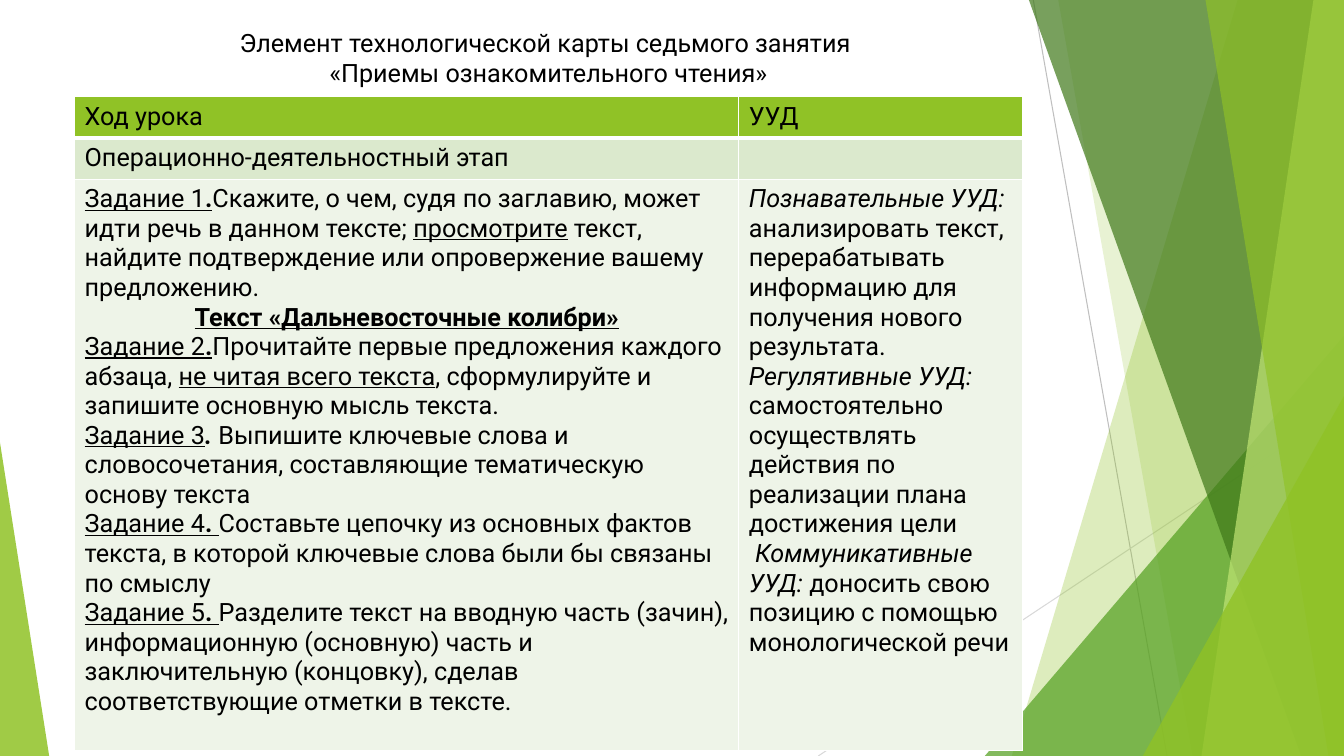
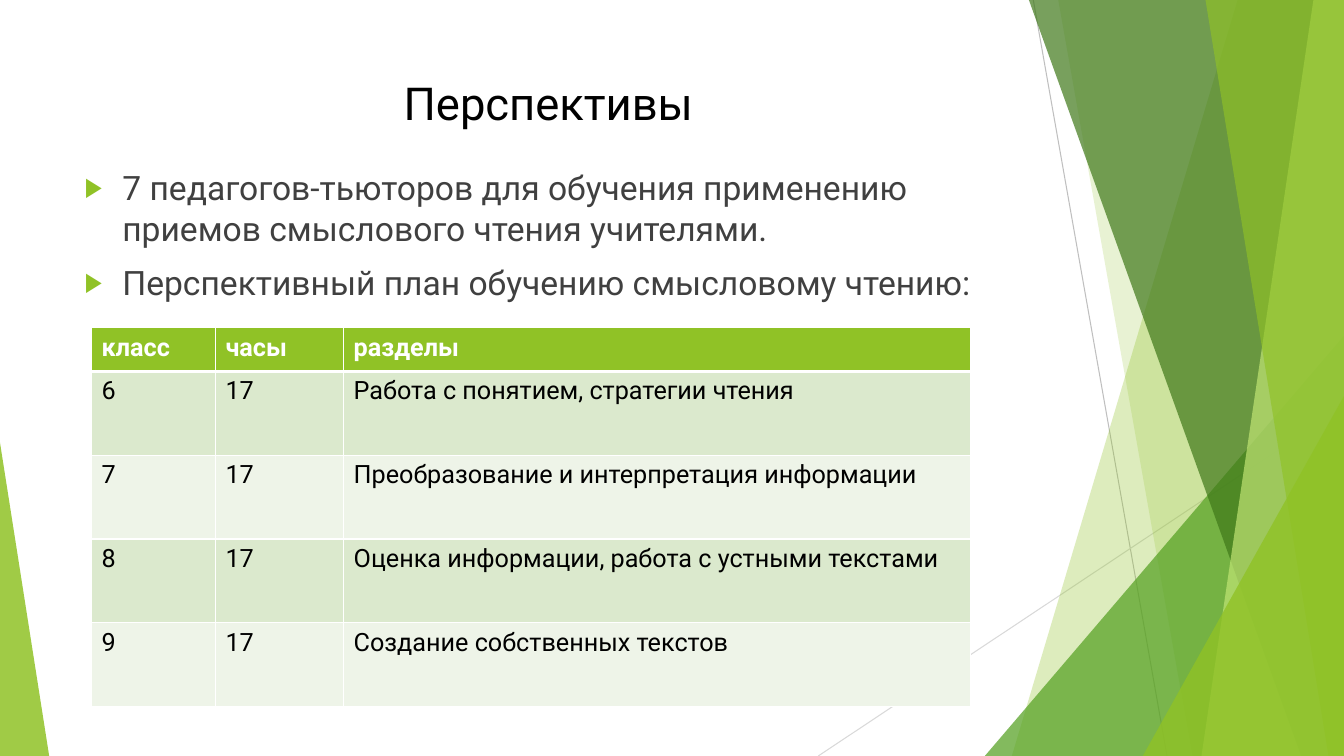
from lxml.etree import SubElement
from pptx import Presentation
from pptx.dml.color import RGBColor
from pptx.enum.shapes import MSO_CONNECTOR, MSO_SHAPE
from pptx.enum.text import MSO_ANCHOR, MSO_AUTO_SIZE, PP_ALIGN
from pptx.oxml.ns import qn
from pptx.util import Cm, Pt

# Colours
LIME = RGBColor(0x90, 0xC2, 0x26)
GREEN = RGBColor(0x54, 0xA0, 0x21)
DARK = RGBColor(0x3F, 0x78, 0x19)
PALE = RGBColor(0xC0, 0xE4, 0x74)
BAND = RGBColor(0xDB, 0xE9, 0xCD)
LIGHT = RGBColor(0xEE, 0xF4, 0xE8)
SILVER = RGBColor(0xBF, 0xBF, 0xBF)
MIST = RGBColor(0xD9, 0xD9, 0xD9)
TEXT = RGBColor(0x40, 0x40, 0x40)
BLACK = RGBColor(0, 0, 0)
WHITE = RGBColor(0xFF, 0xFF, 0xFF)

WIDE, HIGH = 33.87, 19.05
LEFT, SPAN = 1.88, 23.88  # shared text column


class Deck:
    """Holds the style and the current slide."""

    font = "Roboto"

    def __init__(self):
        self.prs = Presentation()
        self.prs.slide_width, self.prs.slide_height = Cm(WIDE), Cm(HIGH)
        self.slide = None

    def start(self, layout, title, top, height, size):
        self.slide = self.prs.slides.add_slide(self.prs.slide_layouts[layout])
        self.decor()
        self.title(title, top, height, size)

    def style(self, run, size, color, marks=""):
        font = run.font
        font.name, font.size, font.color.rgb = self.font, Pt(size), color
        font.bold, font.italic = "b" in marks, "i" in marks
        font.underline = "u" in marks

    # Backdrop
    def line(self, x1, y1, x2, y2, color):
        line = self.slide.shapes.add_connector(
            MSO_CONNECTOR.STRAIGHT, Cm(x1), Cm(y1), Cm(x2), Cm(y2))
        line.line.color.rgb, line.line.width = color, Pt(0.75)
        SubElement(line.element.spPr, qn("a:effectLst"))

    def paint(self, shape, color, alpha):
        shape.shadow.inherit = False
        shape.fill.solid()
        shape.fill.fore_color.rgb = color
        tone = shape.element.spPr.find(".//" + qn("a:srgbClr"))
        SubElement(tone, qn("a:alpha"), val=str(alpha * 1000))
        shape.line.fill.background()

    def blade(self, top, foot, color, alpha):
        """Full-height pane from a slanted left edge to the right slide edge."""
        pen = self.slide.shapes.build_freeform(Cm(top), 0)
        pen.add_line_segments([(Cm(WIDE), 0), (Cm(WIDE), Cm(HIGH)),
                               (Cm(foot), Cm(HIGH))])
        self.paint(pen.convert_to_shape(), color, alpha)

    def wedge(self, left, right, top, peak, color, alpha):
        """Triangle standing on the bottom edge of the slide."""
        shape = self.slide.shapes.add_shape(
            MSO_SHAPE.ISOSCELES_TRIANGLE,
            Cm(left), Cm(top), Cm(right - left), Cm(HIGH - top))
        shape.adjustments[0] = peak
        self.paint(shape, color, alpha)

    def decor(self):
        self.line(26.04, 0, 29.41, HIGH, SILVER)
        self.line(WIDE, 10.24, 20.62, HIGH, MIST)
        self.blade(31.19, 25.5, LIME, 30)
        self.blade(26.67, 30.05, LIME, 20)
        self.wedge(24.82, WIDE, 8.46, 1, GREEN, 72)
        self.blade(25.93, 32.79, DARK, 70)
        self.blade(33.1, 30.28, PALE, 70)
        self.blade(30.38, 33.48, LIME, 65)
        self.wedge(28.8, WIDE, 9.98, 1, LIME, 80)
        self.wedge(0, 1.24, 11.15, 0, LIME, 85)

    # Placeholders
    def place(self, shape, top, height):
        shape.left, shape.top = Cm(LEFT), Cm(top)
        shape.width, shape.height = Cm(SPAN), Cm(height)
        shape.text_frame.auto_size = MSO_AUTO_SIZE.NONE
        shape.text_frame.word_wrap = True
        return shape.text_frame

    def title(self, text, top, height, size):
        frame = self.place(self.slide.shapes.title, top, height)
        frame.text = text
        frame.vertical_anchor = MSO_ANCHOR.MIDDLE
        para = frame.paragraphs[0]
        para.alignment = PP_ALIGN.CENTER
        for run in para.runs:
            self.style(run, size, BLACK)

    def items(self, lines, top, height):
        frame = self.place(self.slide.placeholders[1], top, height)
        frame.text = "\n".join(lines)
        frame.vertical_anchor = MSO_ANCHOR.TOP
        for para in frame.paragraphs:
            para.space_before = Pt(10)
            self.style(para.runs[0], 24, TEXT)
            self.bullet(para)

    def bullet(self, para):
        props = para._p.get_or_add_pPr()
        props.set("marL", str(Cm(0.95)))
        props.set("indent", str(-Cm(0.95)))
        SubElement(SubElement(props, qn("a:buClr")), qn("a:srgbClr"),
                   val=str(LIME))
        SubElement(props, qn("a:buSzPct"), val="80000")
        SubElement(props, qn("a:buFont"), typeface=self.font)
        SubElement(props, qn("a:buChar"), char="▶")

    # Tables
    def grid(self, left, top, cols, rows, data, ink=BLACK, marks=""):
        table = self.slide.shapes.add_table(
            len(rows), len(cols), Cm(left), Cm(top),
            Cm(sum(cols)), Cm(sum(rows))).table
        for col, width in zip(table.columns, cols):
            col.width = Cm(width)
        for r, (row, height) in enumerate(zip(table.rows, rows)):
            row.height = Cm(height)
            fill = LIME if r == 0 else BAND if r % 2 else LIGHT
            for cell, text in zip(row.cells, data[r]):
                self.edges(cell, r)
                cell.fill.solid()
                cell.fill.fore_color.rgb = fill
                if r == 0:
                    self.label(cell, text, ink, marks)
                else:
                    self.label(cell, text, BLACK)

    def edges(self, cell, row):
        props = cell._tc.get_or_add_tcPr()
        thick = {"T": row == 1, "B": row == 0}
        for side in "LRTB":
            width = Pt(3 if thick.get(side) else 1)
            edge = SubElement(props, qn("a:ln" + side), w=str(width))
            SubElement(SubElement(edge, qn("a:solidFill")), qn("a:srgbClr"),
                       val=str(WHITE))

    def label(self, cell, text, color, marks=""):
        """Text is a string, or paragraphs of (words, marks) pairs."""
        if not text:
            return
        paras = [[(text, marks)]] if isinstance(text, str) else text
        frame = cell.text_frame
        for n, parts in enumerate(paras):
            para = frame.add_paragraph() if n else frame.paragraphs[0]
            for words, mark in parts:
                run = para.add_run()
                run.text = words
                self.style(run, 18, color, mark)
                if "c" in mark:
                    para.alignment = PP_ALIGN.CENTER


# Marks: b bold, i italic, u underlined, c centred
TASKS = [
    [("Задание 1", "u"), (".", "ub"),
     ("Скажите, о чем, судя по заглавию, может идти речь в данном тексте; ", ""),
     ("просмотрите", "u"),
     (" текст, найдите подтверждение или опровержение вашему предложению.", "")],
    [("Текст «Дальневосточные колибри»", "ubc")],
    [("Задание 2", "u"), (".", "ub"),
     ("Прочитайте первые предложения каждого абзаца, ", ""),
     ("не читая всего текста", "u"),
     (", сформулируйте и запишите основную мысль текста.", "")],
    [("Задание 3", "u"), (". ", "bi"),
     ("Выпишите ключевые слова и словосочетания, составляющие "
      "тематическую основу текста", "")],
    [("Задание 4", "u"), (". ", "ub"),
     ("Составьте цепочку из основных фактов текста, в которой ключевые "
      "слова были бы связаны по смыслу", "")],
    [("Задание 5", "u"), (". ", "ub"),
     ("Разделите текст на вводную часть (зачин), информационную (основную) "
      "часть и заключительную (концовку), сделав соответствующие отметки "
      "в тексте.", "")],
]
SKILLS = [
    [("Познавательные УУД: ", "i"), ("анализировать текст,", "")],
    [("перерабатывать информацию для получения нового результата.", "")],
    [("Регулятивные УУД:", "i"),
     (" самостоятельно осуществлять действия по реализации плана "
      "достижения цели", "")],
    [(" Коммуникативные УУД: ", "i"),
     ("доносить свою позицию с помощью монологической речи", "")],
]
PLAN = [
    ("класс", "часы", "разделы"),
    ("6", "17", "Работа с понятием, стратегии чтения"),
    ("7", "17", "Преобразование и интерпретация информации"),
    ("8", "17", "Оценка информации, работа с устными текстами"),
    ("9", "17", "Создание собственных текстов"),
]


def main():
    deck = Deck()

    # Lesson plan
    deck.start(5, "Элемент технологической карты седьмого занятия \v"
               "«Приемы ознакомительного чтения»", 0.48, 1.93, 18)
    deck.grid(LEFT, 2.44, [16.74, 7.14], [1.04, 1.04, 14.4],
              [("Ход урока", "УУД"),
               ("Операционно-деятельностный этап", ""),
               (TASKS, SKILLS)])

    # Outlook
    deck.start(1, "Перспективы", 1.7, 1.75, 32.4)
    deck.items(["7 педагогов-тьюторов для обучения применению приемов "
                "смыслового чтения учителями.",
                "Перспективный план обучению смысловому чтению:"], 4.09, 12.67)
    deck.grid(2.31, 8.26, [3.12, 3.23, 15.8], [1.1] + [2.11] * 4,
              PLAN, WHITE, "b")

    deck.prs.save("out.pptx")


if __name__ == "__main__":
    main()
